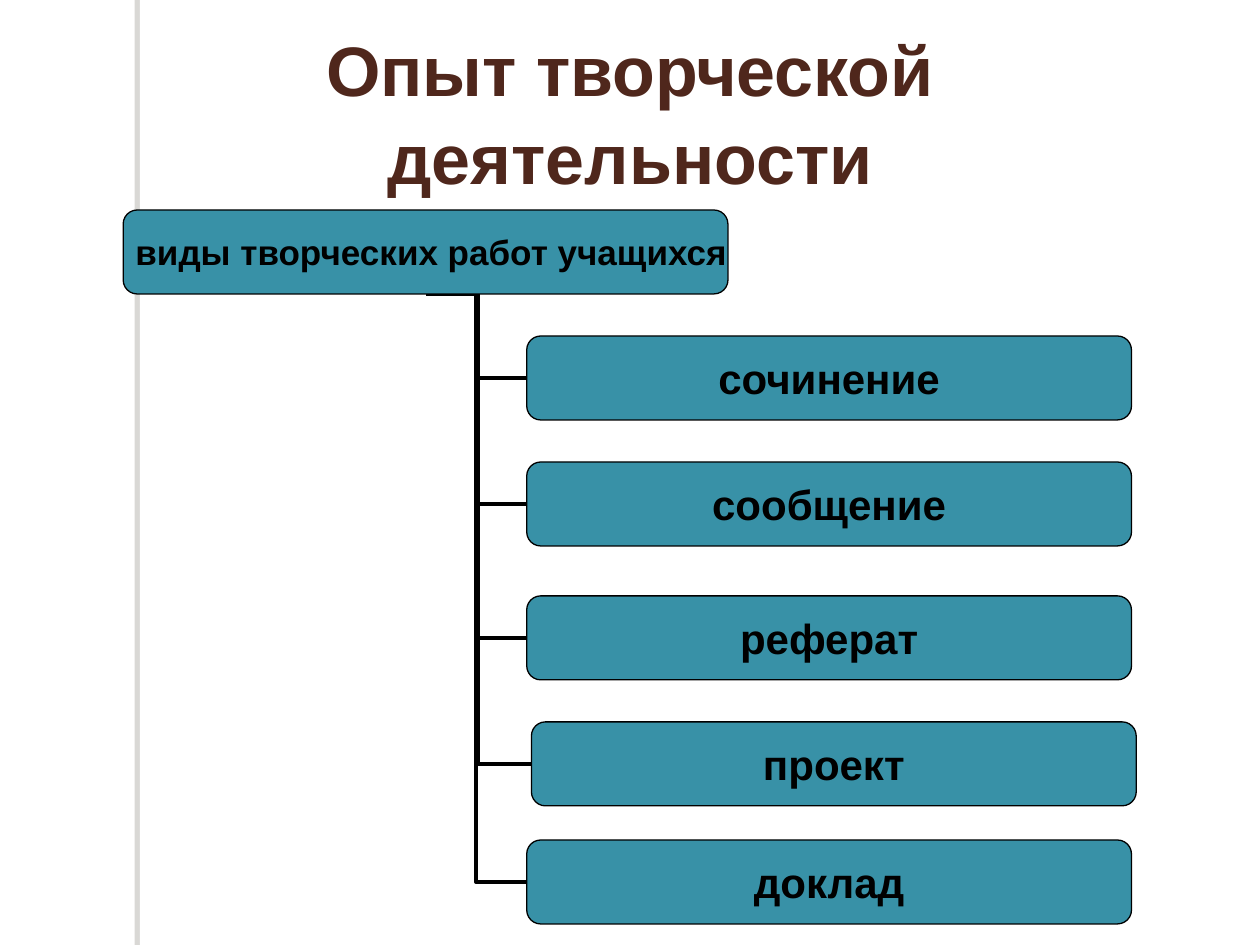
"""Build a slide with a title and a tree of kinds of creative student work."""
from lxml import etree
from pptx import Presentation
from pptx.dml.color import RGBColor
from pptx.enum.shapes import MSO_CONNECTOR, MSO_SHAPE
from pptx.enum.text import MSO_ANCHOR, PP_ALIGN
from pptx.oxml.ns import qn
from pptx.util import Pt

ELBOW = MSO_CONNECTOR.ELBOW
RECTANGLE = MSO_SHAPE.RECTANGLE
ROUNDED = MSO_SHAPE.ROUNDED_RECTANGLE
MIDDLE = MSO_ANCHOR.MIDDLE
CENTER = PP_ALIGN.CENTER

BOX_WIDTH, BOX_HEIGHT = 345.6, 48
ROOT_LEFT, ROOT_TOP = 70.4, 120
BRANCHES = [
    ("сочинение", 301, 192),
    ("сообщение", 301, 264),
    ("реферат", 301, 340.5),
    ("проект", 303.7, 412.5),
    ("доклад", 301, 480),
]


def color(value):
    """Turn a hex string into a colour."""
    return RGBColor.from_string(value)


def add_box(page, text, left, top, size, indent=0):
    """Add a rounded box with centred bold text."""
    box = page.shapes.add_shape(ROUNDED, Pt(left), Pt(top), Pt(BOX_WIDTH), Pt(BOX_HEIGHT))
    box.shadow.inherit = False
    box.fill.solid()
    box.fill.fore_color.rgb = color("3891A7")
    box.line.color.rgb = color("000000")
    box.line.width = Pt(0.75)
    frame = box.text_frame
    frame_format = {"margin_left": Pt(indent), "margin_right": 0, "margin_top": 0,
                    "margin_bottom": 0, "word_wrap": False, "vertical_anchor": MIDDLE}
    for name, value in frame_format.items():
        setattr(frame, name, value)
    para = frame.paragraphs[0]
    para.alignment = CENTER
    span = para.add_run()
    span.text = text
    for name, value in {"name": "Arial", "size": Pt(size), "bold": True}.items():
        setattr(span.font, name, value)
    span.font.color.rgb = color("000000")


deck = Presentation()
deck.slide_width, deck.slide_height = Pt(720), Pt(540)
page = deck.slides.add_slide(deck.slide_layouts[5])

title = page.shapes.title
title_format = {"left": Pt(36), "top": Pt(18), "width": Pt(648), "height": Pt(90)}
for name, value in title_format.items():
    setattr(title, name, value)
title.text_frame.vertical_anchor = MIDDLE
para = title.text_frame.paragraphs[0]
para.alignment = CENTER
para.line_spacing = 1.05
span = para.add_run()
span.text = "Опыт творческой деятельности"
for name, value in {"name": "Arial", "size": Pt(40), "bold": True}.items():
    setattr(span.font, name, value)
span.font.color.rgb = color("4F271C")

strip = page.shapes.add_shape(RECTANGLE, Pt(80), Pt(0), Pt(5.76), Pt(540))
strip.fill.solid()
strip.fill.fore_color.rgb = color("FFFFFF")
strip.line.fill.background()
strip.shadow.inherit = False
effects = strip._element.spPr.find(qn("a:effectLst"))
shadow = etree.SubElement(effects, qn("a:outerShdw"), dist=str(Pt(3)), dir="10800000")
tint = etree.SubElement(shadow, qn("a:srgbClr"), val="706B5F")
etree.SubElement(tint, qn("a:alpha"), val="25000")
page.shapes._spTree.insert(2, strip._element)

for text, left, top in BRANCHES:
    link = page.shapes.add_connector(
        ELBOW, Pt(left), Pt(top + BOX_HEIGHT / 2),
        Pt(ROOT_LEFT + BOX_WIDTH / 2), Pt(ROOT_TOP + BOX_HEIGHT))
    link.line.color.rgb = color("000000")
    link.line.width = Pt(2.25)
    etree.SubElement(link._element.spPr, qn("a:effectLst"))

add_box(page, "виды творческих работ учащихся", ROOT_LEFT, ROOT_TOP, 20, 6.6)
for text, left, top in BRANCHES:
    add_box(page, text, left, top, 24)

deck.save("out.pptx")
